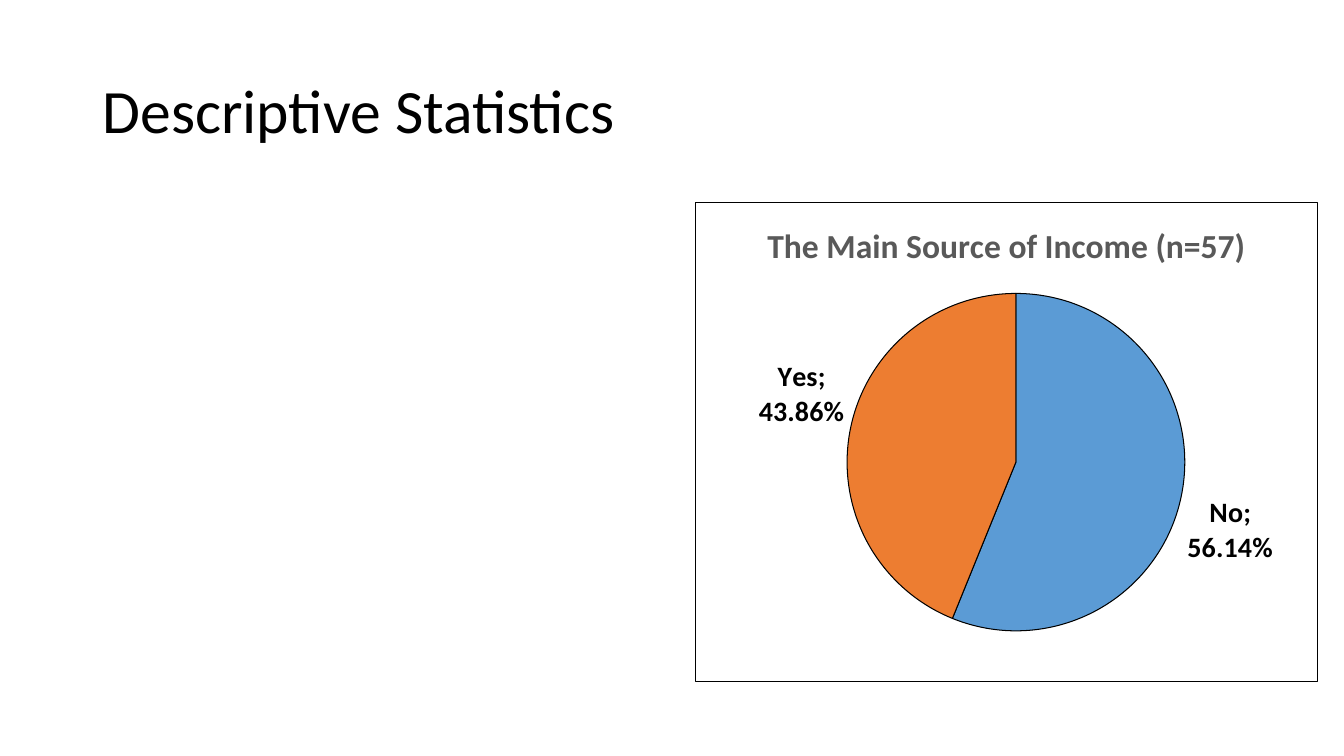
from dataclasses import dataclass

from pptx import Presentation
from pptx.chart.data import CategoryChartData
from pptx.dml.color import RGBColor
from pptx.enum.chart import XL_CHART_TYPE, XL_LABEL_POSITION
from pptx.enum.text import MSO_ANCHOR
from pptx.oxml import parse_xml
from pptx.oxml.ns import nsdecls
from pptx.util import Inches, Pt

PIE = XL_CHART_TYPE.PIE
OUTER = XL_LABEL_POSITION.OUTSIDE_END
MIDDLE = MSO_ANCHOR.MIDDLE

BLACK = RGBColor(0x00, 0x00, 0x00)
WHITE = RGBColor(0xFF, 0xFF, 0xFF)
GRAY = RGBColor(0x59, 0x59, 0x59)
BLUE = RGBColor(0x5B, 0x9B, 0xD5)
ORANGE = RGBColor(0xED, 0x7D, 0x31)
FACE = "Calibri"
WIDE, HIGH = 13.33, 7.5
EDGE = Pt(0.75)


@dataclass
class Box:
    """An area in shares of the slide's size."""
    left: float
    top: float
    width: float
    height: float

    def place(self) -> tuple:
        return (Inches(self.left * WIDE), Inches(self.top * HIGH),
                Inches(self.width * WIDE), Inches(self.height * HIGH))


@dataclass
class Slice:
    name: str
    share: float
    color: RGBColor


HEAD = Box(0.069, 0.053, 0.863, 0.193)
CHART = Box(0.517, 0.267, 0.4635, 0.635)
PLOT = Box(0.244, 0.19, 0.543, 0.705)  # shares of the chart
SLICES = [Slice("No", 0.5614, BLUE), Slice("Yes", 0.4386, ORANGE)]


def style(font, size: float, color: RGBColor = BLACK, bold: bool = False) -> None:
    font.name = FACE
    font.size = Pt(size)
    font.bold = bold
    font.color.rgb = color


def write(frame, text: str, **form) -> None:
    part = frame.paragraphs[0]
    run = part.add_run()
    run.text = text
    style(run.font, **form)


def add_head(slide, text: str) -> None:
    frame = slide.shapes.add_textbox(*HEAD.place()).text_frame
    frame.word_wrap = True
    frame.vertical_anchor = MIDDLE
    frame.paragraphs[0].line_spacing = 0.9
    write(frame, text, size=44)


def frame_chart(chart) -> None:
    """Give the chart its fill, border and fixed plot area."""
    text = chart.font._element.getparent().getparent().getparent()
    text.addprevious(parse_xml(
        f'<c:spPr {nsdecls("c", "a")}>'
        f'<a:solidFill><a:srgbClr val="{WHITE}"/></a:solidFill>'
        f'<a:ln w="{EDGE}"><a:solidFill><a:srgbClr val="{BLACK}"/></a:solidFill></a:ln>'
        '</c:spPr>'))
    plot = chart._chartSpace.chart.plotArea
    for old in plot.xpath("c:layout"):
        plot.remove(old)
    plot.insert(0, parse_xml(
        f'<c:layout {nsdecls("c")}><c:manualLayout><c:layoutTarget val="inner"/>'
        '<c:xMode val="edge"/><c:yMode val="edge"/>'
        f'<c:x val="{PLOT.left}"/><c:y val="{PLOT.top}"/>'
        f'<c:w val="{PLOT.width}"/><c:h val="{PLOT.height}"/>'
        '</c:manualLayout></c:layout>'))


def add_pie(slide, title: str, slices: list[Slice]) -> None:
    data = CategoryChartData(number_format="0.00%")
    data.categories = [item.name for item in slices]
    data.add_series("Series 1", [item.share for item in slices])
    chart = slide.shapes.add_chart(PIE, *CHART.place(), data).chart
    chart.has_legend = False
    style(chart.font, 20)
    frame_chart(chart)

    # Title
    chart.has_title = True
    chart.chart_title.include_in_layout = False
    write(chart.chart_title.text_frame, title, size=24, color=GRAY, bold=True)

    # Slices
    plot = chart.plots[0]
    plot.vary_by_categories = True
    series = plot.series[0]
    for spot, item in enumerate(slices):
        form = series.points[spot].format
        form.fill.solid()
        form.fill.fore_color.rgb = item.color
        form.line.color.rgb = BLACK
        form.line.width = EDGE

    # Labels
    labels = series.data_labels
    labels.show_category_name = True
    labels.show_value = True
    labels.show_percentage = False
    labels.number_format = "0.00%"
    labels.number_format_is_linked = False
    labels.position = OUTER
    style(labels.font, 20, bold=True)
    last = labels._element.xpath("c:showBubbleSize")[0]
    last.addnext(parse_xml(f'<c:separator {nsdecls("c")}>; </c:separator>'))


def main() -> None:
    deck = Presentation()
    deck.slide_width, deck.slide_height = Inches(WIDE), Inches(HIGH)
    slide = deck.slides.add_slide(deck.slide_layouts[6])
    add_head(slide, "Descriptive Statistics")
    add_pie(slide, "The Main Source of Income (n=57)", SLICES)
    deck.save("out.pptx")


if __name__ == "__main__":
    main()
